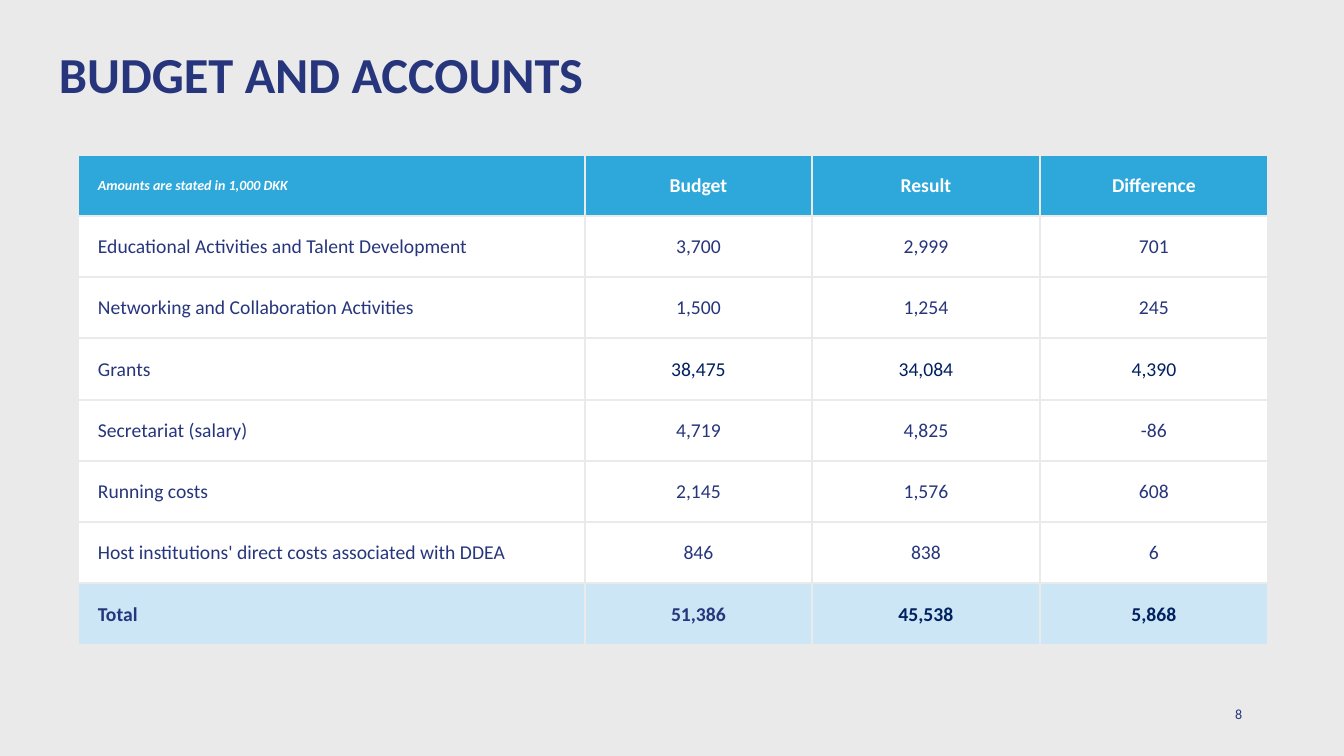
from lxml import etree
from pptx import Presentation
from pptx.dml.color import RGBColor as RGB
from pptx.enum.text import MSO_ANCHOR as Anchor, PP_ALIGN as Align
from pptx.oxml.ns import qn
from pptx.util import Pt

PX = 914400 / 100.8
FONT = "Calibri"
COLORS = {
    "background": "E9EAE9",
    "indigo": "27367C",
    "navy": "002060",
    "header": "2EA7DA",
    "white": "FFFFFF",
    "total": "CCE6F6",
}
HEADINGS = ["Amounts are stated in 1,000 DKK", "Budget", "Result", "Difference"]
ACCOUNTS = [
    ["Educational Activities and Talent Development", "3,700", "2,999", "701"],
    ["Networking and Collaboration Activities", "1,500", "1,254", "245"],
    ["Grants", "38,475", "34,084", "4,390"],
    ["Secretariat (salary)", "4,719", "4,825", "-86"],
    ["Running costs", "2,145", "1,576", "608"],
    ["Host institutions' direct costs associated with DDEA", "846", "838", "6"],
]
TOTALS = ["Total", "51,386", "45,538", "5,868"]
NAVY_FIGURES = {"38,475", "34,084", "4,390", "45,538", "5,868"}


def px(length):
    """Turn pixels into EMU."""
    return round(length * PX)


def color(name):
    """Look up a palette colour."""
    return RGB.from_string(COLORS[name])


def share(total, count):
    """Split a whole length into nearly equal whole parts."""
    return [total * (i + 1) // count - total * i // count for i in range(count)]


def write(paragraph, words, size, ink, bold=False, italic=False, align=Align.LEFT):
    """Add one styled run to a paragraph."""
    paragraph.alignment = align
    run = paragraph.add_run()
    run.text = words
    run.font.name = FONT
    run.font.size = Pt(size)
    run.font.bold = bold
    run.font.italic = italic
    run.font.color.rgb = color(ink)


def add_label(slide, box, words, size, **style):
    """Place a vertically centred line of text in the box."""
    frame = slide.shapes.add_textbox(*map(px, box)).text_frame
    frame.word_wrap = True
    frame.vertical_anchor = Anchor.MIDDLE
    frame.paragraphs[0].line_spacing = 0.9
    write(frame.paragraphs[0], words, size, "indigo", **style)


def add_borders(cell):
    """Draw background-coloured rules on all sides of a cell."""
    properties = cell._tc.get_or_add_tcPr()
    for position, side in enumerate(("a:lnL", "a:lnR", "a:lnT", "a:lnB")):
        line = etree.Element(qn(side), w=str(Pt(2.25)))
        fill = etree.SubElement(line, qn("a:solidFill"))
        etree.SubElement(fill, qn("a:srgbClr"), val=COLORS["background"])
        properties.insert(position, line)


def fill_cell(cell, words, fill, size, ink, first, bold, italic):
    """Fill, frame and letter one table cell."""
    cell.fill.solid()
    cell.fill.fore_color.rgb = color(fill)
    add_borders(cell)
    cell.vertical_anchor = Anchor.MIDDLE
    cell.margin_left = px(20 if first else 1)
    cell.margin_right = cell.margin_top = px(1)
    cell.margin_bottom = 0
    align = Align.LEFT if first else Align.CENTER
    write(cell.text_frame.paragraphs[0], words, size, ink, bold, italic, align)


def add_accounts(slide, box):
    """Build the budget table inside the box."""
    left, top, width, height = box
    rows = [HEADINGS, *ACCOUNTS, TOTALS]
    label_width = 507
    table = slide.shapes.add_table(len(rows), len(HEADINGS), *map(px, box)).table
    widths = [label_width, *share(width - label_width, len(HEADINGS) - 1)]
    for column, column_width in zip(table.columns, widths):
        column.width = px(column_width)
    for row, row_height in zip(table.rows, share(height, len(rows))):
        row.height = px(row_height)
    for r, entries in enumerate(rows):
        heading, total = entries is HEADINGS, entries is TOTALS
        fill = "header" if heading else "total" if total else "white"
        for c, words in enumerate(entries):
            note = heading and c == 0
            ink = "white" if heading else "navy" if words in NAVY_FIGURES else "indigo"
            fill_cell(table.cell(r, c), words, fill, 10 if note else 14, ink,
                      first=c == 0, bold=heading or total, italic=note)


def build_slide(deck):
    """Compose the budget slide."""
    slide = deck.slides.add_slide(deck.slide_layouts[6])
    slide.background.fill.solid()
    slide.background.fill.fore_color.rgb = color("background")
    add_label(slide, (49, 37, 1159, 81), "BUDGET AND ACCOUNTS", 36, bold=True)
    add_accounts(slide, (78, 155, 1190, 490))
    add_label(slide, (1147, 685, 105, 60), "8", 10, align=Align.RIGHT)


def main():
    """Save the one-slide deck."""
    deck = Presentation()
    deck.slide_width, deck.slide_height = px(1344), px(756)
    build_slide(deck)
    deck.save("out.pptx")


if __name__ == "__main__":
    main()
